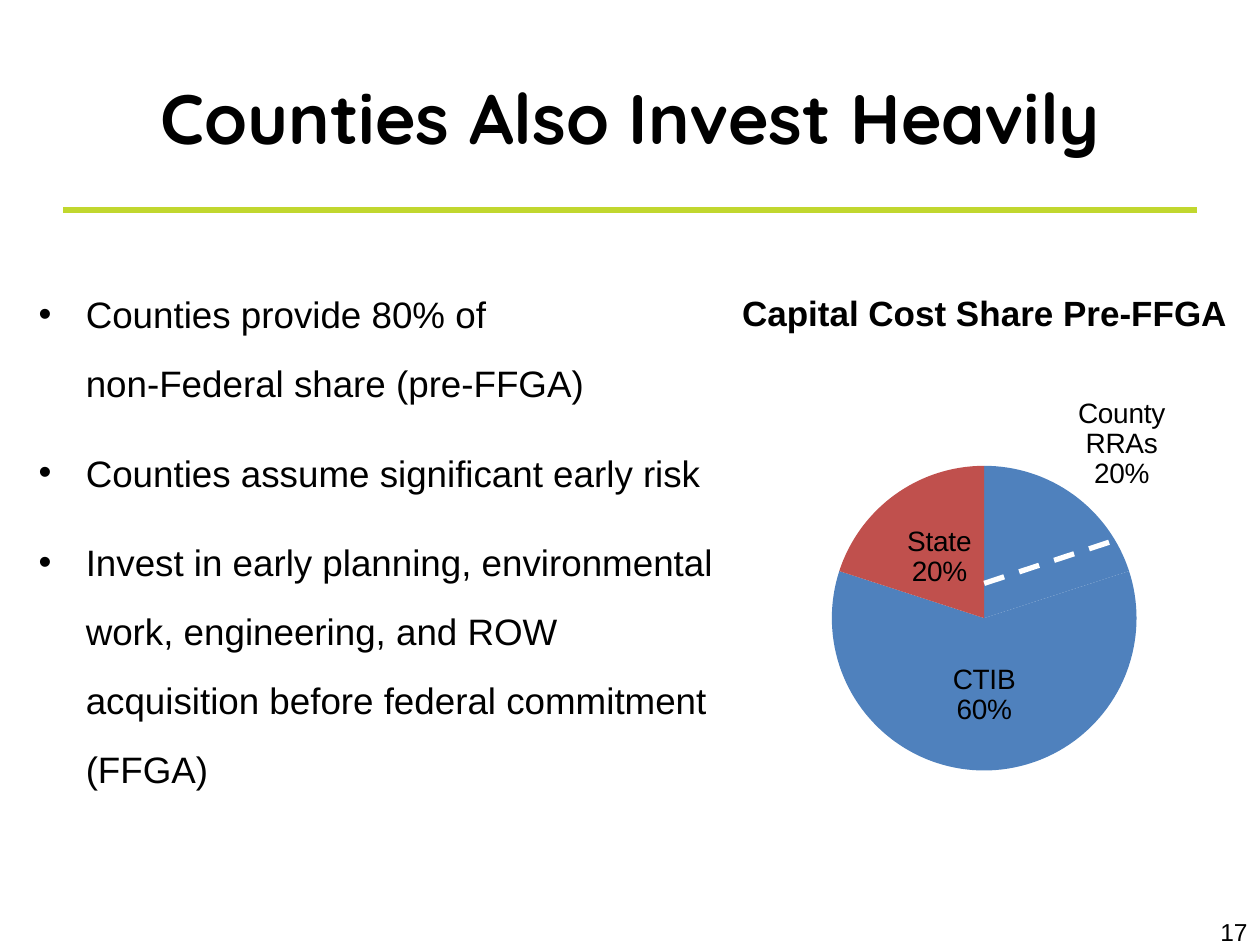
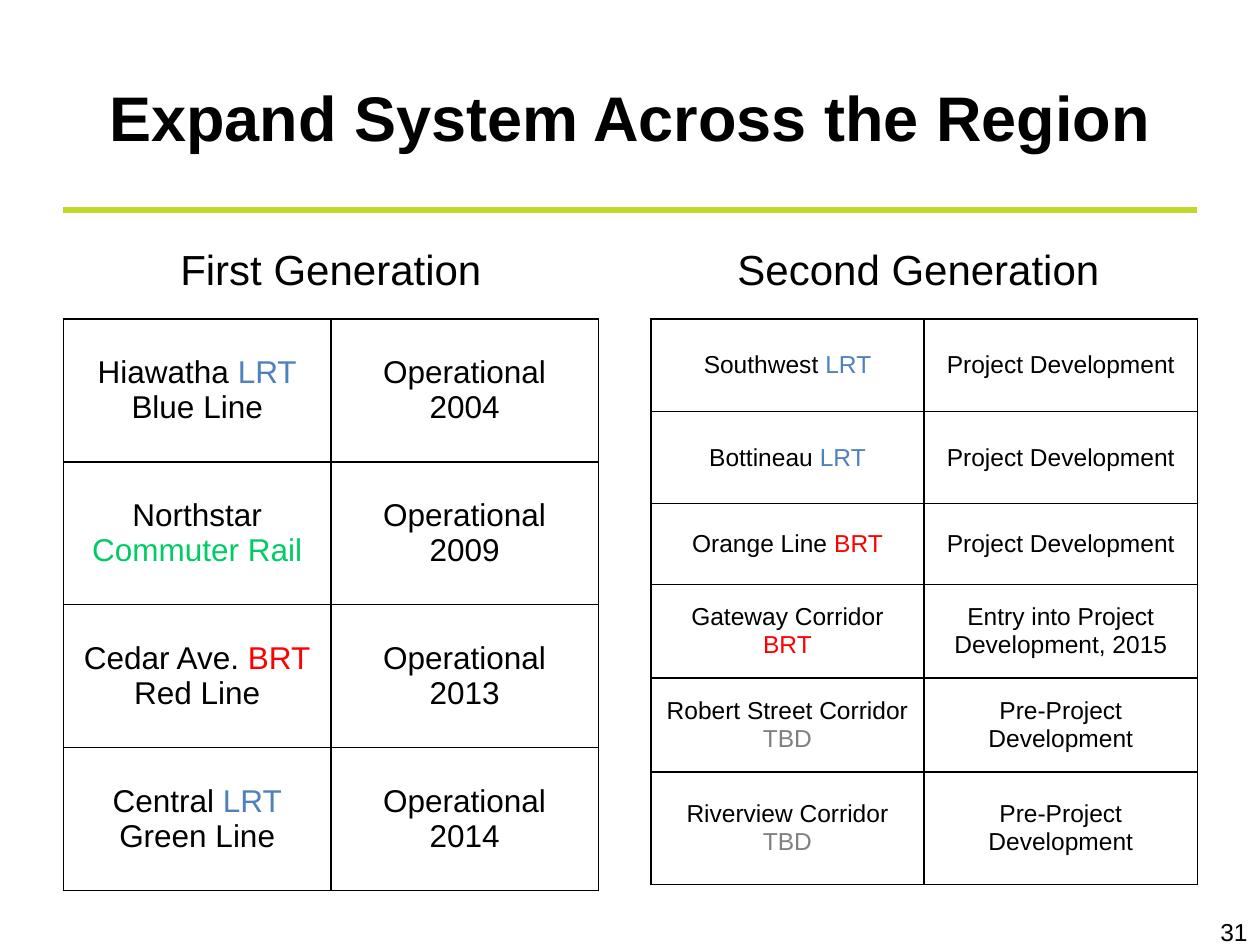
import dataclasses
from typing import Optional

import pptx
import pptx.chart.data
import pptx.dml.color
import pptx.enum.chart
import pptx.enum.dml
import pptx.enum.shapes
import pptx.enum.text
import pptx.oxml
import pptx.oxml.ns
import pptx.util
from pptx.util import Cm, Pt

RGBColor = pptx.dml.color.RGBColor
Align = pptx.enum.text.PP_ALIGN
Anchor = pptx.enum.text.MSO_ANCHOR
LabelPosition = pptx.enum.chart.XL_LABEL_POSITION

BLACK = RGBColor(0x00, 0x00, 0x00)
WHITE = RGBColor(0xFF, 0xFF, 0xFF)
LIME = RGBColor(0xC1, 0xD7, 0x2E)
BLUE = RGBColor(0x4F, 0x81, 0xBD)
BRICK = RGBColor(0xC0, 0x50, 0x4D)
GREEN = RGBColor(0x00, 0xCC, 0x66)
RED = RGBColor(0xFF, 0x00, 0x00)
GRAY = RGBColor(0x80, 0x80, 0x80)

BODY_FONT = "Arial"
# Transit modes are coloured wherever they end a line
MODE_COLORS = {"LRT": BLUE, "BRT": RED, "Commuter Rail": GREEN, "TBD": GRAY}


@dataclasses.dataclass(frozen=True)
class Box:
    """Left, top, width and height in centimetres."""
    left: float
    top: float
    width: float
    height: float

    def lengths(self) -> tuple:
        return tuple(Cm(value) for value in dataclasses.astuple(self))


@dataclasses.dataclass(frozen=True)
class Generation:
    heading: str
    heading_box: Box
    table_left: float
    column_width: float
    row_heights: tuple
    font_size: int
    rows: tuple


@dataclasses.dataclass(frozen=True)
class Share:
    payer: str
    percent: int
    color: RGBColor
    label_position: LabelPosition


TITLE_BOX = Box(1.27, 0.76, 22.86, 3.18)
NUMBER_BOX = Box(19.48, 18.36, 5.92, 0.69)
TABLE_TOP = 6.43

SHARES = (
    Share("County RRAs", 20, BLUE, LabelPosition.OUTSIDE_END),
    Share("CTIB", 60, BLUE, LabelPosition.CENTER),
    Share("State", 20, BRICK, LabelPosition.CENTER),
)

INVESTMENT_POINTS = "\n".join((
    "Counties provide 80% of\vnon-Federal share (pre-FFGA)",
    "Counties assume significant early risk",
    "Invest in early planning, environmental work, engineering, "
    "and ROW acquisition before federal commitment (FFGA)",
))

GENERATIONS = (
    Generation(
        "First Generation", Box(1.27, 4.27, 10.8, 1.78),
        1.28, 5.39, (2.88,) * 4, 18,
        (
            ("Hiawatha LRT\nBlue Line", "Operational\n2004"),
            ("Northstar Commuter Rail", "Operational\n2009"),
            ("Cedar Ave. BRT\nRed Line", "Operational\n2013"),
            ("Central LRT\nGreen Line", "Operational\n2014"),
        ),
    ),
    Generation(
        "Second Generation", Box(12.9, 4.27, 11.23, 1.78),
        13.12, 5.51, (1.87, 1.85, 1.63, 1.89, 1.89, 2.27), 14,
        (
            ("Southwest LRT", "Project Development"),
            ("Bottineau LRT", "Project Development"),
            ("Orange Line BRT", "Project Development"),
            ("Gateway Corridor\vBRT", "Entry into Project Development, 2015"),
            ("Robert Street Corridor\nTBD", "Pre-Project Development"),
            ("Riverview Corridor\nTBD", "Pre-Project Development"),
        ),
    ),
)


def add_element(parent, tag: str, **attributes: str):
    element = parent.makeelement(pptx.oxml.ns.qn(tag), attributes)
    parent.append(element)
    return element


def split_mode(line: str) -> list:
    """Split a line into (text, colour) pairs, setting its mode apart."""
    for mode, color in MODE_COLORS.items():
        if line.endswith(mode):
            return [(line.removesuffix(mode), BLACK), (mode, color)]
    return [(line, BLACK)]


def write_text(frame, text: str, *, size: float, font: str = BODY_FONT,
               bold: bool = False, align: Align = Align.CENTER,
               bulleted: bool = False, line_spacing: Optional[float] = None,
               gap: float = 0) -> None:
    """Write one paragraph per line; a vertical tab breaks within one."""
    for index, paragraph_text in enumerate(text.split("\n")):
        paragraph = frame.paragraphs[0] if index == 0 else frame.add_paragraph()
        if bulleted:
            properties = paragraph._p.get_or_add_pPr()
            properties.set("marL", str(Cm(0.95)))
            properties.set("indent", str(-Cm(0.95)))
            add_element(properties, "a:buFont", typeface=BODY_FONT)
            add_element(properties, "a:buChar", char="•")
        paragraph.alignment = align
        paragraph.space_before = Pt(gap if index else 0)
        paragraph.space_after = Pt(gap)
        if line_spacing:
            paragraph.line_spacing = line_spacing
        for line_index, line in enumerate(paragraph_text.split("\v")):
            if line_index:
                paragraph.add_line_break()
            for run_text, color in split_mode(line):
                if run_text:
                    run = paragraph.add_run()
                    run.text = run_text
                    run.font.name = font
                    run.font.size = Pt(size)
                    run.font.bold = bold
                    run.font.color.rgb = color


def add_text(slide, box: Box, text: str, *, anchor: Anchor = Anchor.TOP,
             **text_format) -> None:
    shape = slide.shapes.add_textbox(*box.lengths())
    shape.text_frame.word_wrap = True
    shape.text_frame.vertical_anchor = anchor
    write_text(shape.text_frame, text, **text_format)


def add_line(slide, start: tuple, end: tuple, color: RGBColor, width: float,
             dashed: bool = False) -> None:
    connector = slide.shapes.add_connector(
        pptx.enum.shapes.MSO_CONNECTOR.STRAIGHT,
        *(Cm(value) for value in start + end))
    connector.line.color.rgb = color
    connector.line.width = Pt(width)
    if dashed:
        connector.line.dash_style = pptx.enum.dml.MSO_LINE.DASH
    add_element(connector._element.spPr, "a:effectLst")


def add_base_slide(presentation, title: str, number: int, *, size: float,
                   font: str = BODY_FONT):
    """Blank slide with the shared rule, title and page number."""
    slide = presentation.slides.add_slide(presentation.slide_layouts[6])
    add_line(slide, (1.27, 4.24), (24.13, 4.24), LIME, 3.5)
    add_text(slide, TITLE_BOX, title, anchor=Anchor.MIDDLE, size=size,
             font=font, bold=True)
    add_text(slide, NUMBER_BOX, str(number), size=14, align=Align.RIGHT)
    return slide


def set_plot_area(chart, **fractions: float) -> None:
    """Fix the inner plot area as fractions of the chart."""
    plot_area = chart._chartSpace.chart.plotArea
    for layout in plot_area.findall(pptx.oxml.ns.qn("c:layout")):
        plot_area.remove(layout)
    layout = add_element(plot_area, "c:layout")
    plot_area.insert(0, layout)
    manual = add_element(layout, "c:manualLayout")
    add_element(manual, "c:layoutTarget", val="inner")
    for mode in ("xMode", "yMode"):
        add_element(manual, f"c:{mode}", val="edge")
    for name, value in fractions.items():
        add_element(manual, f"c:{name}", val=str(value))


def add_share_chart(slide, box: Box) -> None:
    data = pptx.chart.data.CategoryChartData()
    data.categories = [share.payer for share in SHARES]
    data.add_series("Series 1", [share.percent for share in SHARES])
    chart = slide.shapes.add_chart(
        pptx.enum.chart.XL_CHART_TYPE.PIE, *box.lengths(), data).chart
    chart.has_legend = False
    chart.has_title = False
    chart.font.name = BODY_FONT
    chart.font.size = Pt(16)
    chart.font.color.rgb = BLACK
    set_plot_area(chart, x=0.23, y=0.28, w=0.55, h=0.56)

    series = chart.plots[0].series[0]
    labels = series.data_labels
    labels.show_value = False
    labels.show_category_name = True
    labels.show_percentage = True
    for index, share in enumerate(SHARES):
        point = series.points[index]
        point.format.fill.solid()
        point.format.fill.fore_color.rgb = share.color
        point.format.line.fill.background()
        label = point.data_label
        label.position = share.label_position
        label.font.name = BODY_FONT
        label.font.size = Pt(16)
        label.font.color.rgb = BLACK
    # Each label shows its category above its percentage
    for label in series._element.xpath("c:dLbls/c:dLbl"):
        for tag, shown in (("showVal", "0"), ("showCatName", "1"),
                           ("showPercent", "1")):
            label.find(pptx.oxml.ns.qn(f"c:{tag}")).set("val", shown)
        add_element(label, "c:separator").text = "\n"


def add_borders(cell) -> None:
    properties = cell._tc.get_or_add_tcPr()
    for index, side in enumerate(("lnL", "lnR", "lnT", "lnB")):
        line = add_element(properties, f"a:{side}", w=str(Pt(1)))
        properties.insert(index, line)
        fill = add_element(line, "a:solidFill")
        add_element(fill, "a:srgbClr", val=str(BLACK))


def add_generation(slide, generation: Generation) -> None:
    add_text(slide, generation.heading_box, generation.heading,
             anchor=Anchor.BOTTOM, size=24)
    column_count = len(generation.rows[0])
    box = Box(generation.table_left, TABLE_TOP,
              generation.column_width * column_count,
              sum(generation.row_heights))
    table = slide.shapes.add_table(
        len(generation.rows), column_count, *box.lengths()).table
    table.first_row = False
    table.horz_banding = False
    for column in table.columns:
        column.width = Cm(generation.column_width)
    for row, height, texts in zip(table.rows, generation.row_heights,
                                  generation.rows):
        row.height = Cm(height)
        for cell, text in zip(row.cells, texts):
            cell.fill.background()
            cell.vertical_anchor = Anchor.MIDDLE
            add_borders(cell)
            write_text(cell.text_frame, text, size=generation.font_size)


def main() -> None:
    presentation = pptx.Presentation()
    presentation.slide_width = Cm(25.4)
    presentation.slide_height = Cm(19.05)

    # County investment: points on the left, cost shares on the right
    slide = add_base_slide(presentation, "Counties Also Invest Heavily", 17,
                           size=40, font="Quicksand")
    add_text(slide, Box(14.3, 5.75, 11.1, 1.07), "Capital Cost Share Pre-FFGA",
             size=20, bold=True)
    add_text(slide, Box(0.53, 5.26, 14.2, 12.47), INVESTMENT_POINTS, size=21,
             align=Align.LEFT, bulleted=True, line_spacing=1.56, gap=6)
    add_share_chart(slide, Box(14.17, 6.32, 11.23, 10.97))
    add_line(slide, (19.84, 11.76), (24, 10.39), WHITE, 3, dashed=True)

    # Regional system: one table per generation
    slide = add_base_slide(presentation, "Expand System Across the Region", 31,
                           size=36)
    for generation in GENERATIONS:
        add_generation(slide, generation)

    presentation.save("out.pptx")


if __name__ == "__main__":
    main()
